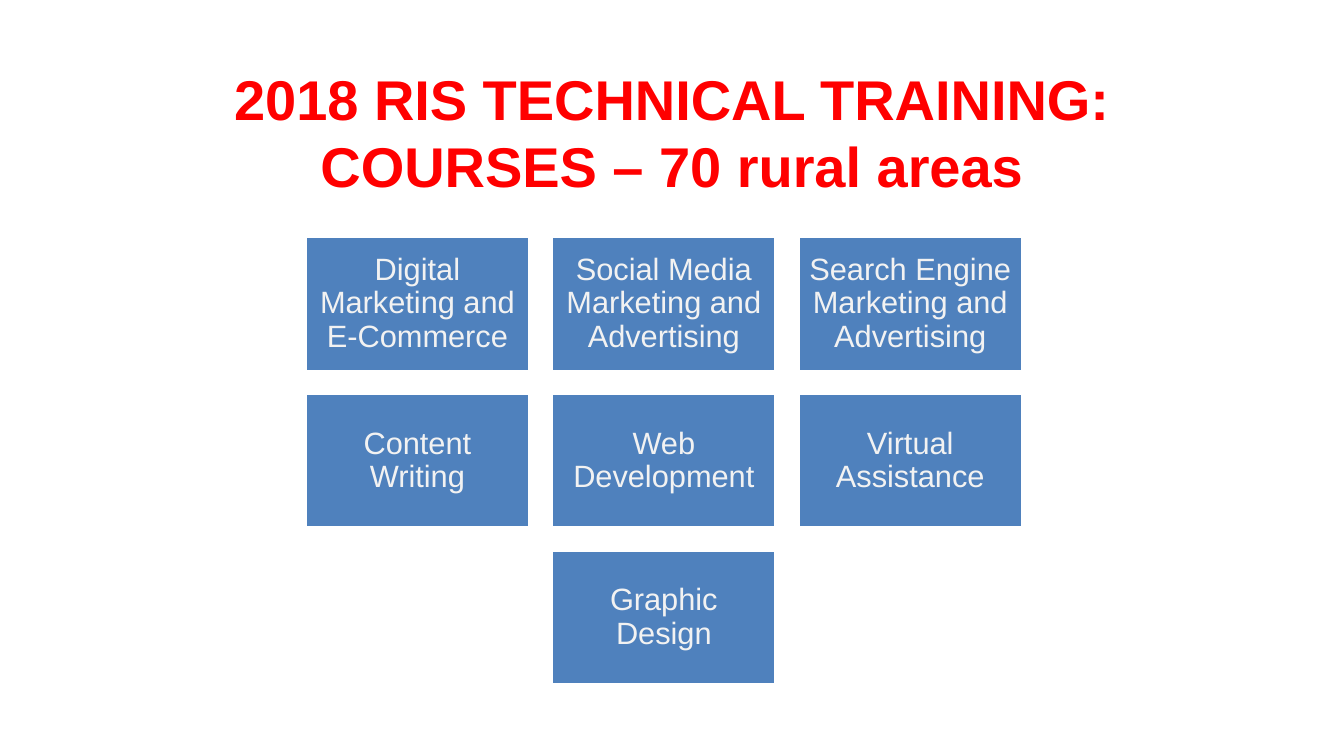
from pptx import Presentation
from pptx.dml.color import RGBColor
from pptx.enum.shapes import MSO_SHAPE
from pptx.enum.text import MSO_ANCHOR, PP_ALIGN
from pptx.util import Cm, Pt

RECT = MSO_SHAPE.RECTANGLE
MIDDLE = MSO_ANCHOR.MIDDLE
CENTER = PP_ALIGN.CENTER
RED = RGBColor(0xFF, 0x00, 0x00)
BLUE = RGBColor(0x4F, 0x81, 0xBD)
WHITE = RGBColor(0xFF, 0xFF, 0xFF)
PALE = RGBColor(0xF2, 0xF2, 0xF2)

TITLE = "2018 RIS TECHNICAL TRAINING: COURSES – 70 rural areas"
COURSES = [
    "Digital Marketing and E-Commerce",
    "Social Media Marketing and Advertising",
    "Search Engine Marketing and Advertising",
    "Content Writing",
    "Web Development",
    "Virtual Assistance",
    "Graphic Design",
]
COLUMNS = 3
GAP = 0.57
TITLE_FONT = {"name": "Arial", "size": Pt(40), "bold": True}
COURSE_FONT = {"name": "Arial", "size": Pt(22), "bold": False}


def write(s, text, font, color, spacing, inset):
    """Put centred text in a shape with the given format."""
    tf = s.text_frame
    frame = {"word_wrap": True, "vertical_anchor": MIDDLE}
    for side in ("left", "right", "top", "bottom"):
        frame[f"margin_{side}"] = Cm(inset)
    for name, value in frame.items():
        setattr(tf, name, value)
    p = tf.paragraphs[0]
    p.alignment = CENTER
    p.line_spacing = spacing
    r = p.add_run()
    r.text = text
    for name, value in font.items():
        setattr(r.font, name, value)
    r.font.color.rgb = color


def add_title(slide, left, top, width, height):
    """Place the heading in its box."""
    s = slide.shapes.add_textbox(Cm(left), Cm(top), Cm(width), Cm(height))
    write(s, TITLE, TITLE_FONT, RED, 1.0, 0.13)


def add_course(slide, text, left, top, width, height):
    """Place one course tile."""
    s = slide.shapes.add_shape(RECT, Cm(left), Cm(top), Cm(width), Cm(height))
    s.shadow.inherit = False
    s.fill.solid()
    s.fill.fore_color.rgb = BLUE
    s.line.color.rgb = WHITE
    s.line.width = Pt(2)
    write(s, text, COURSE_FONT, PALE, 0.9, 0.23)


def add_courses(slide, left, top, width, height):
    """Fill the box with rows of tiles, each row centred."""
    rows = [COURSES[i:i + COLUMNS] for i in range(0, len(COURSES), COLUMNS)]
    tile_w = (width - GAP * (COLUMNS - 1)) / COLUMNS
    tile_h = (height - GAP * (len(rows) - 1)) / len(rows)
    for i, row in enumerate(rows):
        indent = (COLUMNS - len(row)) * (tile_w + GAP) / 2
        for j, text in enumerate(row):
            x = left + indent + j * (tile_w + GAP)
            add_course(slide, text, x, top + i * (tile_h + GAP), tile_w, tile_h)


def main():
    """Build and save the slide."""
    prs = Presentation()
    prs.slide_width = Cm(33.87)
    prs.slide_height = Cm(19.05)
    slide = prs.slides.add_slide(prs.slide_layouts[6])
    add_title(slide, 5.13, 2.74, 23.6, 1.17)
    add_courses(slide, 7.7, 5.97, 18.06, 11.28)
    prs.save("out.pptx")


if __name__ == "__main__":
    main()
